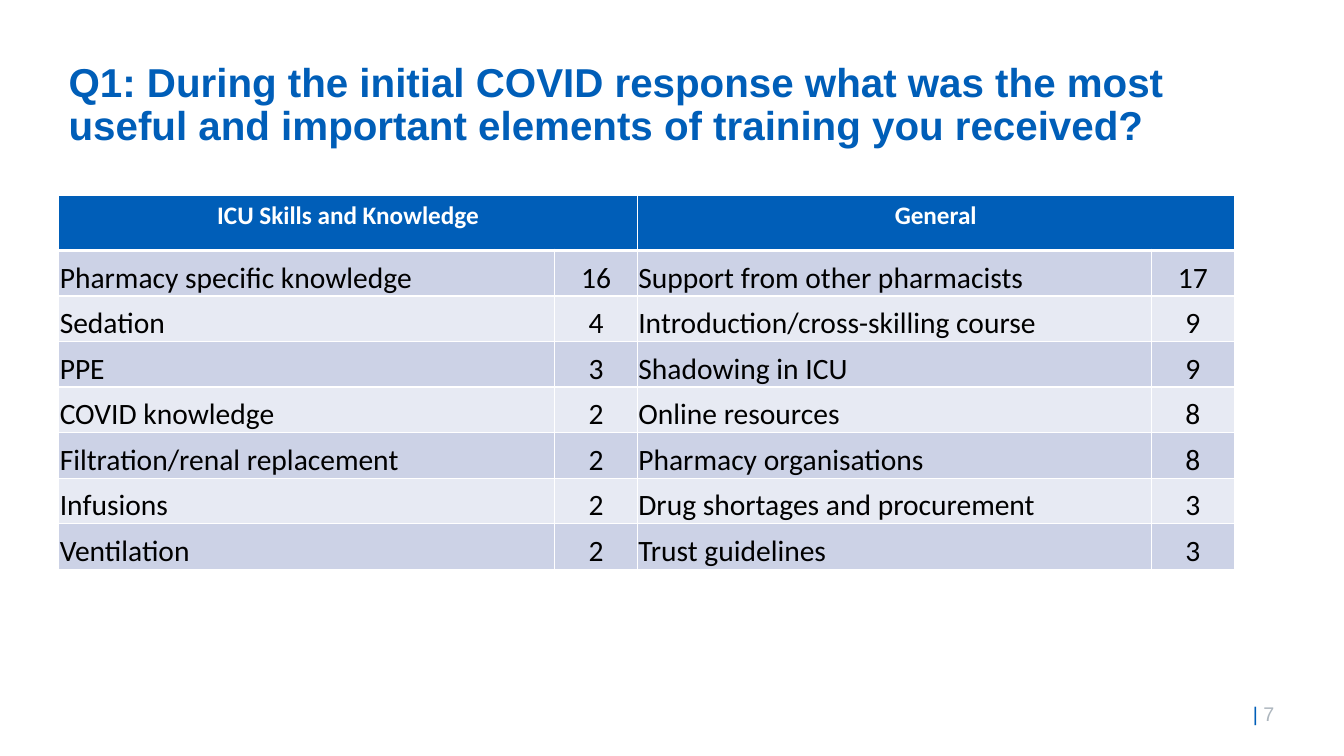
from lxml import etree
from pptx import Presentation
from pptx.dml.color import RGBColor
from pptx.enum.text import MSO_ANCHOR as Anchor, MSO_AUTO_SIZE as AutoSize, PP_ALIGN as Align
from pptx.oxml.ns import qn
from pptx.util import Pt

BLUE = RGBColor(0x00, 0x5E, 0xB8)
GREY = RGBColor(0xAD, 0xB6, 0xBE)
WHITE = RGBColor(0xFF, 0xFF, 0xFF)
BLACK = RGBColor(0x00, 0x00, 0x00)
BAND_DARK = RGBColor(0xCC, 0xD2, 0xE6)
BAND_LIGHT = RGBColor(0xE7, 0xEA, 0xF3)

TITLE = ("Q1: During the initial COVID response what was the most "
         "useful and important elements of training you received?")
HEADERS = ["ICU Skills and Knowledge", "General"]
ANSWERS = [
    ("Pharmacy specific knowledge", 16, "Support from other pharmacists", 17),
    ("Sedation", 4, "Introduction/cross-skilling course", 9),
    ("PPE", 3, "Shadowing in ICU", 9),
    ("COVID knowledge", 2, "Online resources", 8),
    ("Filtration/renal replacement", 2, "Pharmacy organisations", 8),
    ("Infusions", 2, "Drug shortages and procurement", 3),
    ("Ventilation", 2, "Trust guidelines", 3),
]
COLUMN_WIDTHS = [354.2, 59.1, 367.2, 59.1]
HEADER_HEIGHT, ROW_HEIGHT = 39.2, 32.55


def set_font(font, name, size, color, bold=False):
    font.name, font.size, font.bold = name, Pt(size), bold
    font.color.rgb = color


def set_borders(cell, bottom=1):
    """Draw white lines on all four sides; call before filling the cell."""
    tcPr = cell._tc.get_or_add_tcPr()
    for side, width in (("L", 1), ("R", 1), ("T", 1), ("B", bottom)):
        ln = etree.SubElement(tcPr, qn(f"a:ln{side}"), w=str(Pt(width)))
        fill = etree.SubElement(ln, qn("a:solidFill"))
        etree.SubElement(fill, qn("a:srgbClr"), val=str(WHITE))


def format_cell(cell, text, fill, size, color, bold=False, align=Align.LEFT):
    cell.fill.solid()
    cell.fill.fore_color.rgb = fill
    p = cell.text_frame.paragraphs[0]
    p.text = text
    p.alignment = align
    for r in p.runs:
        set_font(r.font, "Calibri", size, color, bold)


def add_title(s):
    sp = s.shapes.title
    sp.left, sp.top, sp.width, sp.height = Pt(41.8), Pt(41), Pt(876), Pt(98.6)
    tf = sp.text_frame
    tf.text = TITLE
    tf.word_wrap, tf.auto_size = True, AutoSize.NONE
    tf.vertical_anchor = Anchor.TOP
    p = tf.paragraphs[0]
    p.alignment, p.line_spacing = Align.LEFT, 0.9
    set_font(p.runs[0].font, "Arial", 28.8, BLUE, bold=True)


def add_answer_table(s):
    frame = s.shapes.add_table(len(ANSWERS) + 1, len(COLUMN_WIDTHS), Pt(42), Pt(139.7),
                               Pt(sum(COLUMN_WIDTHS)),
                               Pt(HEADER_HEIGHT + ROW_HEIGHT * len(ANSWERS)))
    table = frame.table
    for column, width in zip(table.columns, COLUMN_WIDTHS):
        column.width = Pt(width)
    for i, row in enumerate(table.rows):
        row.height = Pt(ROW_HEIGHT if i else HEADER_HEIGHT)
        for cell in row.cells:
            set_borders(cell, bottom=1 if i else 3)

    # Header row: each heading spans a label and a count column
    for i, heading in enumerate(HEADERS):
        cell = table.cell(0, 2 * i)
        cell.merge(table.cell(0, 2 * i + 1))
        format_cell(cell, heading, BLUE, 18, WHITE, bold=True, align=Align.CENTER)

    # Answer rows with alternating bands
    for i, answers in enumerate(ANSWERS, start=1):
        band = BAND_DARK if i % 2 else BAND_LIGHT
        for j, value in enumerate(answers):
            cell = table.cell(i, j)
            cell.margin_left = cell.margin_right = cell.margin_top = Pt(0.7)
            cell.margin_bottom = Pt(0)
            cell.vertical_anchor = Anchor.BOTTOM
            format_cell(cell, str(value), band, 21.1, BLACK,
                        align=Align.CENTER if j % 2 else Align.LEFT)


def add_page_number(s, number):
    sp = s.shapes.add_textbox(Pt(887.8), Pt(497.5), Pt(67.7), Pt(24.5))
    tf = sp.text_frame
    tf.word_wrap = True
    p = tf.paragraphs[0]
    for text, color in (("| ", BLUE), (str(number), GREY)):
        r = p.add_run()
        r.text = text
        set_font(r.font, "Arial", 14.1, color)


def main():
    prs = Presentation()
    prs.slide_width, prs.slide_height = Pt(960), Pt(540)
    s = prs.slides.add_slide(prs.slide_layouts[5])
    add_title(s)
    add_answer_table(s)
    add_page_number(s, 7)
    prs.save("out.pptx")


if __name__ == "__main__":
    main()
